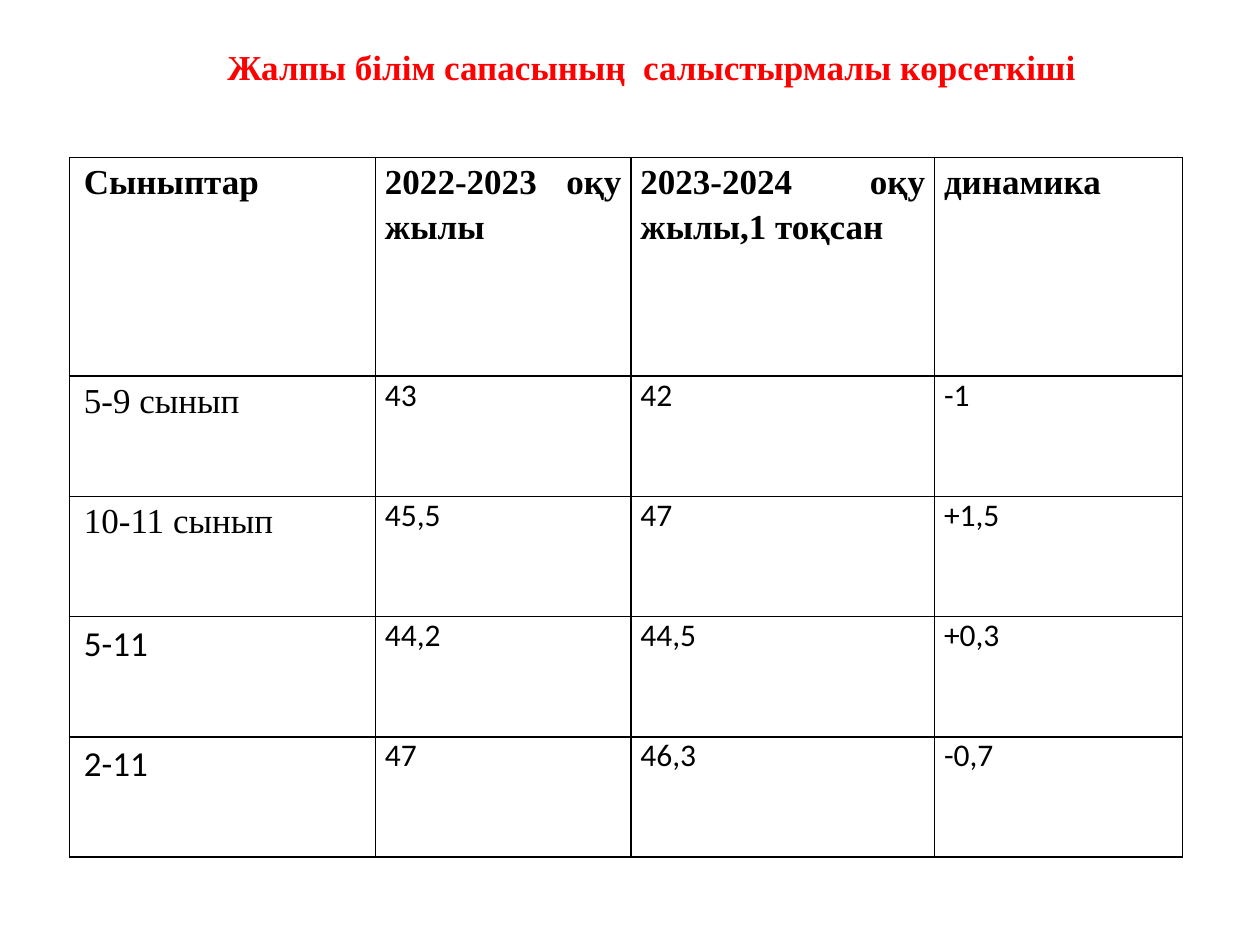
from collections import namedtuple
from dataclasses import dataclass

from lxml import etree
from pptx import Presentation
from pptx.dml.color import RGBColor
from pptx.enum.text import MSO_ANCHOR, MSO_AUTO_SIZE, PP_ALIGN
from pptx.oxml.ns import qn
from pptx.util import Cm, Pt

CENTER, JUSTIFY, LEFT = PP_ALIGN.CENTER, PP_ALIGN.JUSTIFY, PP_ALIGN.LEFT
MIDDLE, TOP = MSO_ANCHOR.MIDDLE, MSO_ANCHOR.TOP
GROW = MSO_AUTO_SIZE.SHAPE_TO_FIT_TEXT

Box = namedtuple("Box", "left top width height")


@dataclass(frozen=True)
class Theme:
    title_color: RGBColor = RGBColor(0xFF, 0x00, 0x00)
    ink: RGBColor = RGBColor(0x00, 0x00, 0x00)
    serif: str = "Times New Roman"
    sans: str = "Calibri"
    large: Pt = Pt(20)
    normal: Pt = Pt(18)
    border: Pt = Pt(1)


THEME = Theme()

TITLE = "Жалпы білім сапасының  салыстырмалы көрсеткіші"
HEADER = ("Сыныптар", "2022-2023 оқу жылы", "2023-2024 оқу жылы,1 тоқсан", "динамика")
RESULTS = (
    ("5-9 сынып", "43", "42", "-1"),
    ("10-11 сынып", "45,5", "47", "+1,5"),
    ("5-11", "44,2", "44,5", "+0,3"),
    ("2-11", "47", "46,3", "-0,7"),
)
SERIF_LABELS = ("5-9 сынып", "10-11 сынып")
COLUMN_WIDTHS = (6.17, 5.15, 6.12, 5.0)
HEADER_HEIGHT = Cm(4.4)


def apply_format(target, values):
    for name, value in values.items():
        setattr(target, name, value)


def write_text(frame, text, align, font, color, spacing=1.0, indents=None):
    para = frame.paragraphs[0]
    apply_format(para, {"alignment": align, "line_spacing": spacing})
    for name, length in (indents or {}).items():
        para._p.get_or_add_pPr().set(name, str(length))
    span = para.add_run()
    span.text = text
    apply_format(span.font, font)
    span.font.color.rgb = color


def add_title(page, box):
    title = page.shapes.title
    apply_format(title, box._asdict())
    frame = title.text_frame
    apply_format(frame, {"vertical_anchor": MIDDLE, "word_wrap": True, "auto_size": GROW})
    font = {"name": THEME.serif, "size": THEME.large, "bold": True}
    write_text(frame, TITLE, CENTER, font, THEME.title_color,
               indents={"marL": 0, "indent": Cm(0.5)})


def draw_borders(cell):
    properties = cell._tc.get_or_add_tcPr()
    for side in ("a:lnL", "a:lnR", "a:lnT", "a:lnB"):
        line = etree.SubElement(properties, qn(side), w=str(THEME.border))
        fill = etree.SubElement(line, qn("a:solidFill"))
        etree.SubElement(fill, qn("a:srgbClr"), val=str(THEME.ink))


def fill_cell(cell, text, is_header, is_label):
    apply_format(cell, {
        "margin_left": Cm(0.19), "margin_right": Cm(0.19),
        "margin_top": 0, "margin_bottom": 0, "vertical_anchor": TOP,
    })
    draw_borders(cell)
    cell.fill.background()
    emphasised = is_header or is_label
    font = {
        "name": THEME.serif if is_header or text in SERIF_LABELS else THEME.sans,
        "size": THEME.large if emphasised else THEME.normal,
        "bold": is_header,
    }
    write_text(cell.text_frame, text, JUSTIFY if emphasised else LEFT, font, THEME.ink,
               spacing=1.15 if emphasised else 1.0,
               indents={"marL": Cm(0.1), "indent": 0} if is_label else None)


def add_results_table(page, box):
    rows = (HEADER,) + RESULTS
    table = page.shapes.add_table(len(rows), len(HEADER), *box).table
    apply_format(table, {"first_row": False, "horz_banding": False})
    for column, width in zip(table.columns, COLUMN_WIDTHS):
        column.width = Cm(width)
    row_height = (box.height - HEADER_HEIGHT) // len(RESULTS)
    for row_index, texts in enumerate(rows):
        table.rows[row_index].height = row_height if row_index else HEADER_HEIGHT
        for column_index, text in enumerate(texts):
            fill_cell(table.cell(row_index, column_index), text,
                      row_index == 0, column_index == 0)


def main():
    deck = Presentation()
    apply_format(deck, {"slide_width": Cm(25.4), "slide_height": Cm(19.05)})
    page = deck.slides.add_slide(deck.slide_layouts.get_by_name("Title Only"))
    add_results_table(page, Box(Cm(1.4), Cm(3.18), Cm(22.44), Cm(14.1)))
    add_title(page, Box(Cm(2.97), Cm(0.79), Cm(19.84), Cm(1.12)))
    deck.save("out.pptx")


if __name__ == "__main__":
    main()
